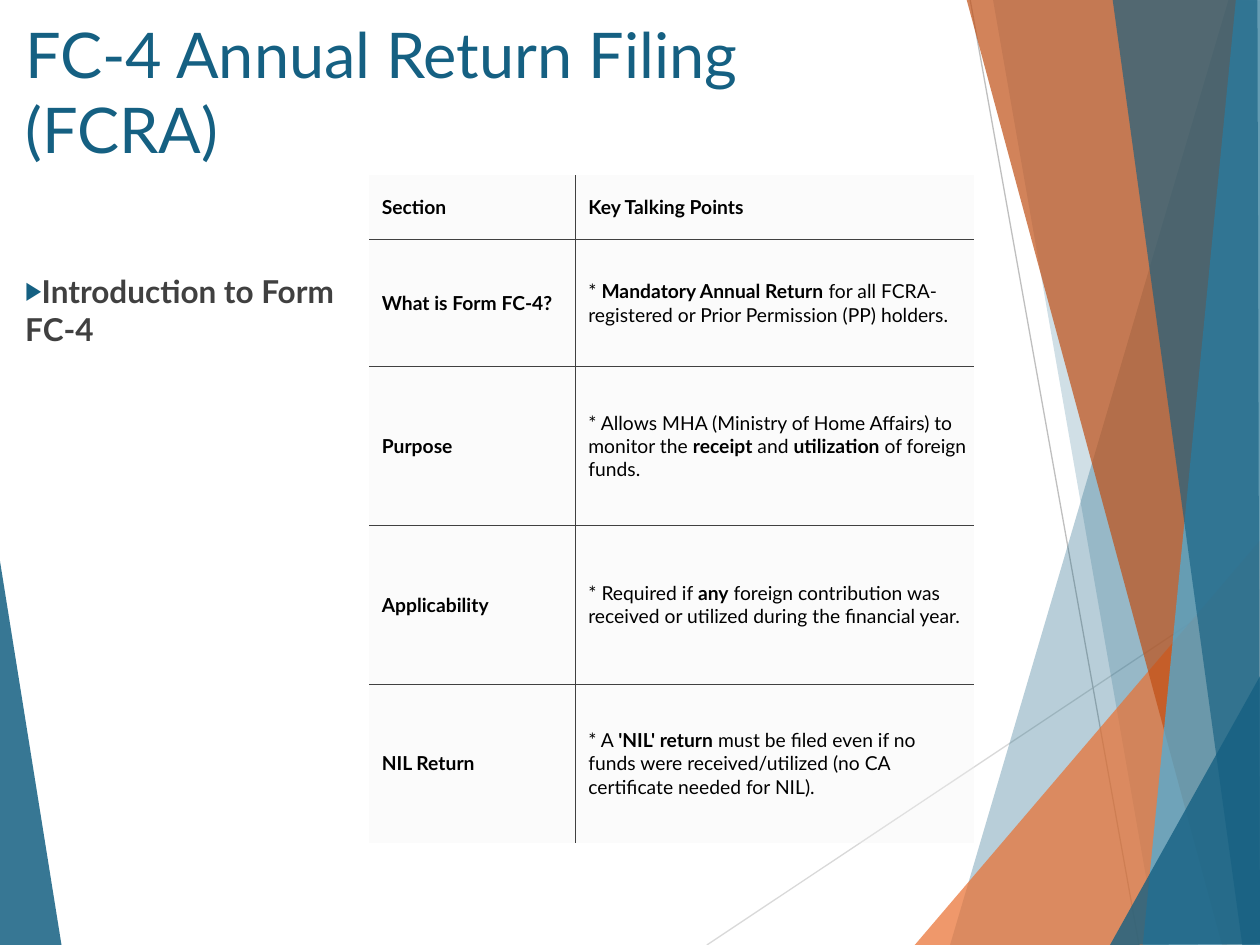
from dataclasses import dataclass

from lxml.etree import SubElement
from pptx import Presentation
from pptx.dml.color import RGBColor
from pptx.enum.shapes import MSO_CONNECTOR
from pptx.enum.text import MSO_ANCHOR, MSO_AUTO_SIZE, PP_ALIGN
from pptx.oxml.ns import qn
from pptx.util import Inches, Pt


@dataclass(frozen=True)
class Theme:
    font: str = "Lato"
    teal: str = "156082"
    orange: str = "E97132"
    rust: str = "C04F15"
    sky: str = "46B1E1"
    body: str = "404040"
    cell_text: str = "000000"
    cell_fill: str = "F2F2F2"
    pale_line: str = "D9D9D9"
    grey_line: str = "BFBFBF"
    title_size: int = 36
    body_size: int = 18
    table_size: int = 11


THEME = Theme()
NO_STYLE = "{2D5ABB26-0587-4C30-8999-92F81FD0307C}"

# Facets from back to front: colour, opacity in percent, corner points
FACETS = [
    (THEME.teal, 85, [(-0.01, 4.39), (0.49, 7.51), (-0.01, 7.5)]),
    (THEME.teal, 30, [(9.75, 0), (7.54, 7.5), (10.02, 7.51), (10.01, 0.01)]),
    (THEME.teal, 20, [(7.88, -0.01), (9.19, 7.5), (10.01, 7.5), (10.01, -0.01)]),
    (THEME.orange, 72, [(7.26, 7.5), (10, 4.29), (10.01, 7.5)]),
    (THEME.rust, 70, [(7.67, -0.01), (9.7, 7.5), (10.01, 7.49), (10.01, -0.01)]),
    (THEME.sky, 70, [(9.81, -0.01), (9.07, 7.5), (10.01, 7.5), (10, -0.01)]),
    (THEME.teal, 65, [(8.83, -0.01), (9.86, 7.5), (10, 7.5), (9.98, -0.01)]),
    (THEME.teal, 80, [(8.81, 7.5), (10.01, 5.35), (10.01, 7.49)]),
]
RAYS = [
    (THEME.pale_line, (5.61, 7.5), (10.01, 4.57)),
    (THEME.grey_line, (7.7, 0), (9.04, 7.5)),
]

# Every cell is a list of pieces; bold alternates and ends of ** mark the switch
TALKING_POINTS = [
    ("**Section**", "**Key Talking Points**"),
    ("**What is Form FC-4?**",
     "* **Mandatory Annual Return** for all FCRA-registered or Prior Permission (PP) holders."),
    ("**Purpose**",
     "* Allows MHA (Ministry of Home Affairs) to monitor the **receipt** and "
     "**utilization** of foreign funds."),
    ("**Applicability**",
     "* Required if **any** foreign contribution was received or utilized "
     "during the financial year."),
    ("**NIL Return**",
     "* A **'NIL' return** must be filed even if no funds were received/utilized "
     "(no CA certificate needed for NIL)."),
]


def apply_format(target, **values):
    for name, value in values.items():
        setattr(target, name, value)


def place(part, box):
    left, top, width, height = map(Inches, box)
    apply_format(part, left=left, top=top, width=width, height=height)


def add_run(paragraph, words, size, color, bold=False):
    run = paragraph.add_run()
    run.text = words
    apply_format(run.font, name=THEME.font, size=Pt(size), bold=bold)
    run.font.color.rgb = RGBColor.from_string(color)


def fill_translucent(fill, color, percent):
    fill.solid()
    fill.fore_color.rgb = RGBColor.from_string(color)
    srgb = fill._xPr.find(qn("a:solidFill"))[0]
    SubElement(srgb, qn("a:alpha"), val=str(percent * 1000))


# Background facets and thin rays
def add_facet(slide, color, percent, points):
    corners = [(Inches(x), Inches(y)) for x, y in points]
    builder = slide.shapes.build_freeform(*corners[0])
    builder.add_line_segments(corners[1:], close=True)
    facet = builder.convert_to_shape()
    fill_translucent(facet.fill, color, percent)
    facet.line.fill.background()
    facet.shadow.inherit = False


def add_ray(slide, color, start, end):
    ray = slide.shapes.add_connector(
        MSO_CONNECTOR.STRAIGHT, *map(Inches, start + end))
    ray.line.color.rgb = RGBColor.from_string(color)
    ray.line.width = Pt(0.75)
    SubElement(ray._element.spPr, qn("a:effectLst"))


def add_backdrop(slide):
    add_facet(slide, *FACETS[0])
    for ray in RAYS:
        add_ray(slide, *ray)
    for facet in FACETS[1:]:
        add_facet(slide, *facet)


# Title and list in the template's placeholders
def fill_placeholder(holder, box, words, size, color, anchor, bold=False):
    place(holder, box)
    holder._element.getparent().append(holder._element)  # in front of the backdrop
    apply_format(holder.text_frame, word_wrap=True, vertical_anchor=anchor,
                 auto_size=MSO_AUTO_SIZE.NONE)
    paragraph = holder.text_frame.paragraphs[0]
    paragraph.alignment = PP_ALIGN.LEFT
    add_run(paragraph, words, size, color, bold)
    return paragraph


def add_title(slide, box):
    fill_placeholder(slide.shapes.title, box, "FC-4 Annual Return Filing (FCRA)",
                     THEME.title_size, THEME.teal, MSO_ANCHOR.MIDDLE)


def add_topic(slide, box):
    topic = fill_placeholder(slide.placeholders[1], box, "Introduction to Form FC-4",
                             THEME.body_size, THEME.body, MSO_ANCHOR.TOP, bold=True)
    topic.space_before = Pt(10)
    props = topic._p.get_or_add_pPr()
    for name in ("marL", "indent"):
        props.set(name, "0")
    bullet_color = SubElement(props, qn("a:buClr"))
    SubElement(bullet_color, qn("a:srgbClr"), val=THEME.teal)
    SubElement(props, qn("a:buSzPct"), val="80000")
    SubElement(props, qn("a:buChar"), char="▶")


# Table of talking points with inner rules only
def add_border(cell, side):
    border = SubElement(cell._tc.get_or_add_tcPr(), qn(f"a:ln{side}"), w=str(Pt(0.5)))
    SubElement(SubElement(border, qn("a:solidFill")), qn("a:srgbClr"), val=THEME.body)


def fill_cell(cell, words, sides):
    apply_format(cell, vertical_anchor=MSO_ANCHOR.MIDDLE,
                 margin_left=Inches(0.1), margin_right=Inches(0.06),
                 margin_top=Inches(0.08), margin_bottom=Inches(0.08))
    for side in sides:
        add_border(cell, side)
    fill_translucent(cell.fill, THEME.cell_fill, 30)
    for index, piece in enumerate(words.split("**")):
        if piece:
            add_run(cell.text_frame.paragraphs[0], piece, THEME.table_size,
                    THEME.cell_text, bold=index % 2 == 1)


def add_talking_points(slide, box):
    table = slide.shapes.add_table(len(TALKING_POINTS), 2, *map(Inches, box)).table
    apply_format(table, first_row=False, horz_banding=False)
    table._tbl.tblPr.find(qn("a:tableStyleId")).text = NO_STYLE
    for column, width in zip(table.columns, (1.64, 3.16)):
        column.width = Inches(width)
    for row, height in zip(table.rows, (0.51, 1.01, 1.26, 1.26, 1.26)):
        row.height = Inches(height)
    last = len(TALKING_POINTS) - 1
    for r, texts in enumerate(TALKING_POINTS):
        for c, words in enumerate(texts):
            sides = ("R" if c == 0 else "L") + "T" * (r > 0) + "B" * (r < last)
            fill_cell(table.cell(r, c), words, sides)


def main():
    deck = Presentation()
    apply_format(deck, slide_width=Inches(10), slide_height=Inches(7.5))
    slide = deck.slides.add_slide(deck.slide_layouts[1])
    add_backdrop(slide)
    add_title(slide, (0.1, 0, 7.05, 1.44))
    add_topic(slide, (0.1, 2.11, 3.25, 4.1))
    add_talking_points(slide, (2.93, 1.39, 4.8, 5.29))
    deck.save("out.pptx")


if __name__ == "__main__":
    main()
